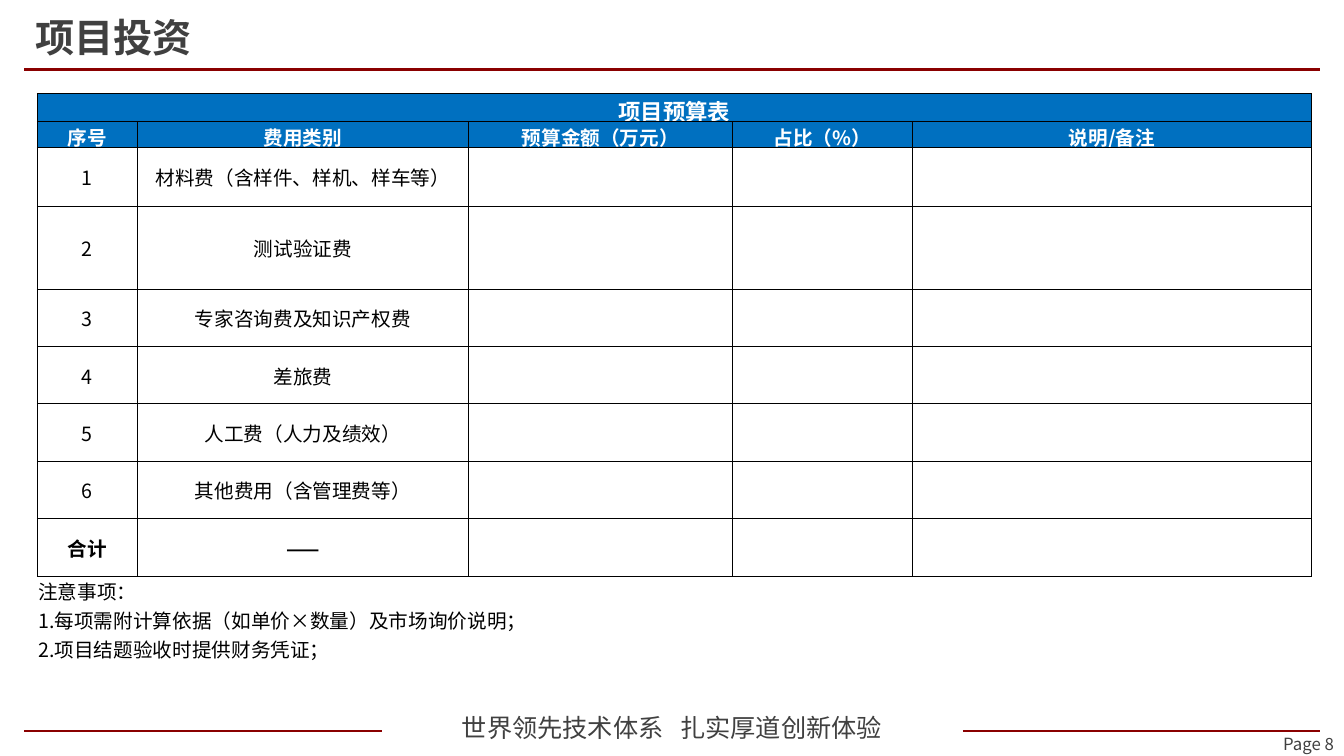
"""Build the project investment slide with its budget table."""
from dataclasses import dataclass

from lxml import etree
from pptx import Presentation
from pptx import util as u
from pptx.dml.color import RGBColor
from pptx.enum import shapes, text
from pptx.oxml import ns


@dataclass(frozen=True)
class Theme:
    font: str = "Noto Sans CJK SC"
    rule: str = "8A0000"
    grey: str = "404040"
    black: str = "000000"
    white: str = "FFFFFF"
    blue: str = "0070C0"
    title: int = 28
    slogan: int = 18
    caption: int = 16
    body: int = 14
    page: int = 12


@dataclass(frozen=True)
class Style:
    size: int
    color: str
    bold: bool = False
    align: text.PP_ALIGN = text.PP_ALIGN.CENTER


@dataclass(frozen=True)
class Rule:
    left: float
    right: float
    y: float


@dataclass(frozen=True)
class Box:
    left: float
    top: float
    width: float
    height: float

    def lengths(self) -> list:
        return [u.Inches(v) for v in (self.left, self.top, self.width, self.height)]


T = Theme()
TITLE = Style(T.title, T.grey, True, text.PP_ALIGN.LEFT)
SLOGAN = Style(T.slogan, T.grey)
PAGE = Style(T.page, T.grey, align=text.PP_ALIGN.RIGHT)
CAPTION = Style(T.caption, T.white, True)
HEADER = Style(T.body, T.white, True)
BODY = Style(T.body, T.black)
TOTAL = Style(T.body, T.black, True)
NOTE = Style(T.body, T.black, align=text.PP_ALIGN.LEFT)

RULES = [Rule(0.24, 13.09, 0.69), Rule(0.24, 3.79, 7.25), Rule(9.55, 13.09, 7.25)]
COLUMNS = [0.99, 3.29, 2.61, 1.79, 3.96]
ROWS = [0.24, 0.25, 0.59, 0.82] + [0.57] * 5 + [0.59]
HEADINGS = ["序号", "费用类别", "预算金额（万元）", "占比（%）", "说明/备注"]
COSTS = ["材料费（含样件、样机、样车等）", "测试验证费", "专家咨询费及知识产权费",
         "差旅费", "人工费（人力及绩效）", "其他费用（含管理费等）"]
NOTES = ["注意事项：", "1.每项需附计算依据（如单价×数量）及市场询价说明；",
         "2.项目结题验收时提供财务凭证；"]


def add_run(p, words: str, style: Style):
    r = p.add_run()
    r.text = words
    f = r.font
    f.name, f.size, f.bold = T.font, u.Pt(style.size), style.bold
    f.color.rgb = RGBColor.from_string(style.color)
    ea = etree.SubElement(r._r.get_or_add_rPr(), ns.qn("a:ea"))
    ea.set("typeface", T.font)
    return r


def write(tf, lines: list[str], style: Style):
    p = tf.paragraphs[0]
    p.alignment = style.align
    for i, line in enumerate(lines):
        if i:
            p.add_line_break()
        add_run(p, line, style)
    return p


def add_rule(s, rule: Rule) -> None:
    ends = (u.Inches(v) for v in (rule.left, rule.y, rule.right, rule.y))
    sp = s.shapes.add_connector(shapes.MSO_CONNECTOR.STRAIGHT, *ends)
    sp.line.color.rgb = RGBColor.from_string(T.rule)
    sp.line.width = u.Pt(1.5)
    etree.SubElement(sp._element.spPr, ns.qn("a:effectLst"))


def add_text(s, box: Box, anchor: text.MSO_ANCHOR, words: str, style: Style):
    tf = s.shapes.add_textbox(*box.lengths()).text_frame
    tf.word_wrap = True
    tf.vertical_anchor = anchor
    return write(tf, [words], style)


def add_title(s) -> None:
    sp = s.shapes.title
    sp.left, sp.top, sp.width, sp.height = Box(0.25, 0.08, 10.63, 0.62).lengths()
    tf = sp.text_frame
    tf.auto_size = text.MSO_AUTO_SIZE.NONE
    tf.vertical_anchor = text.MSO_ANCHOR.MIDDLE
    write(tf, ["项目投资"], TITLE).line_spacing = 0.9


def format_cell(cell, sides: str, fill: str | None) -> None:
    cell.margin_left = cell.margin_top = cell.margin_right = u.Inches(0.01)
    cell.margin_bottom = 0
    cell.vertical_anchor = text.MSO_ANCHOR.MIDDLE
    pr = cell._tc.get_or_add_tcPr()
    for side in "LRTB":
        ln = etree.SubElement(pr, ns.qn(f"a:ln{side}"), w=str(u.Pt(0.5)))
        if side in sides:
            solid = etree.SubElement(ln, ns.qn("a:solidFill"))
            etree.SubElement(solid, ns.qn("a:srgbClr"), val=T.black)
        else:
            etree.SubElement(ln, ns.qn("a:noFill"))
    if fill:
        cell.fill.solid()
        cell.fill.fore_color.rgb = RGBColor.from_string(fill)
    else:
        cell.fill.background()


def add_budget(s) -> None:
    box = Box(0.37, 0.93, sum(COLUMNS), sum(ROWS))
    table = s.shapes.add_table(len(ROWS), len(COLUMNS), *box.lengths()).table
    table.first_row = table.horz_banding = False
    for column, width in zip(table.columns, COLUMNS):
        column.width = u.Inches(width)
    for row, height in zip(table.rows, ROWS):
        row.height = u.Inches(height)
    last = len(ROWS) - 1
    for i, row in enumerate(table.rows):
        for cell in row.cells:
            format_cell(cell, "T" if i == last else "LRTB", T.blue if i < 2 else None)
    for i in (0, last):
        table.cell(i, 0).merge(table.cell(i, len(COLUMNS) - 1))
    write(table.cell(0, 0).text_frame, ["项目预算表"], CAPTION)
    lines = [(HEADINGS, HEADER)]
    lines += [([str(n), cost], BODY) for n, cost in enumerate(COSTS, 1)]
    lines += [(["合计", "——"], TOTAL)]
    for i, (words, style) in enumerate(lines, 1):
        for j, word in enumerate(words):
            write(table.cell(i, j).text_frame, [word], style)
    write(table.cell(last, 0).text_frame, NOTES, NOTE)


def main() -> None:
    prs = Presentation()
    prs.slide_width, prs.slide_height = u.Inches(13.33), u.Inches(7.5)
    s = prs.slides.add_slide(prs.slide_layouts[5])
    add_title(s)
    for rule in RULES:
        add_rule(s, rule)
    p = add_text(s, Box(0, 7.02, 13.33, 0.4), text.MSO_ANCHOR.TOP, "世界领先技术体系", SLOGAN)
    gap = add_run(p, " ", SLOGAN)
    gap._r.get_or_add_rPr().set("spc", "800")
    add_run(p, "扎实厚道创新体验", SLOGAN)
    add_text(s, Box(10.33, 7.18, 3, 0.4), text.MSO_ANCHOR.MIDDLE, "Page 8", PAGE)
    add_budget(s)
    prs.save("out.pptx")


if __name__ == "__main__":
    main()
